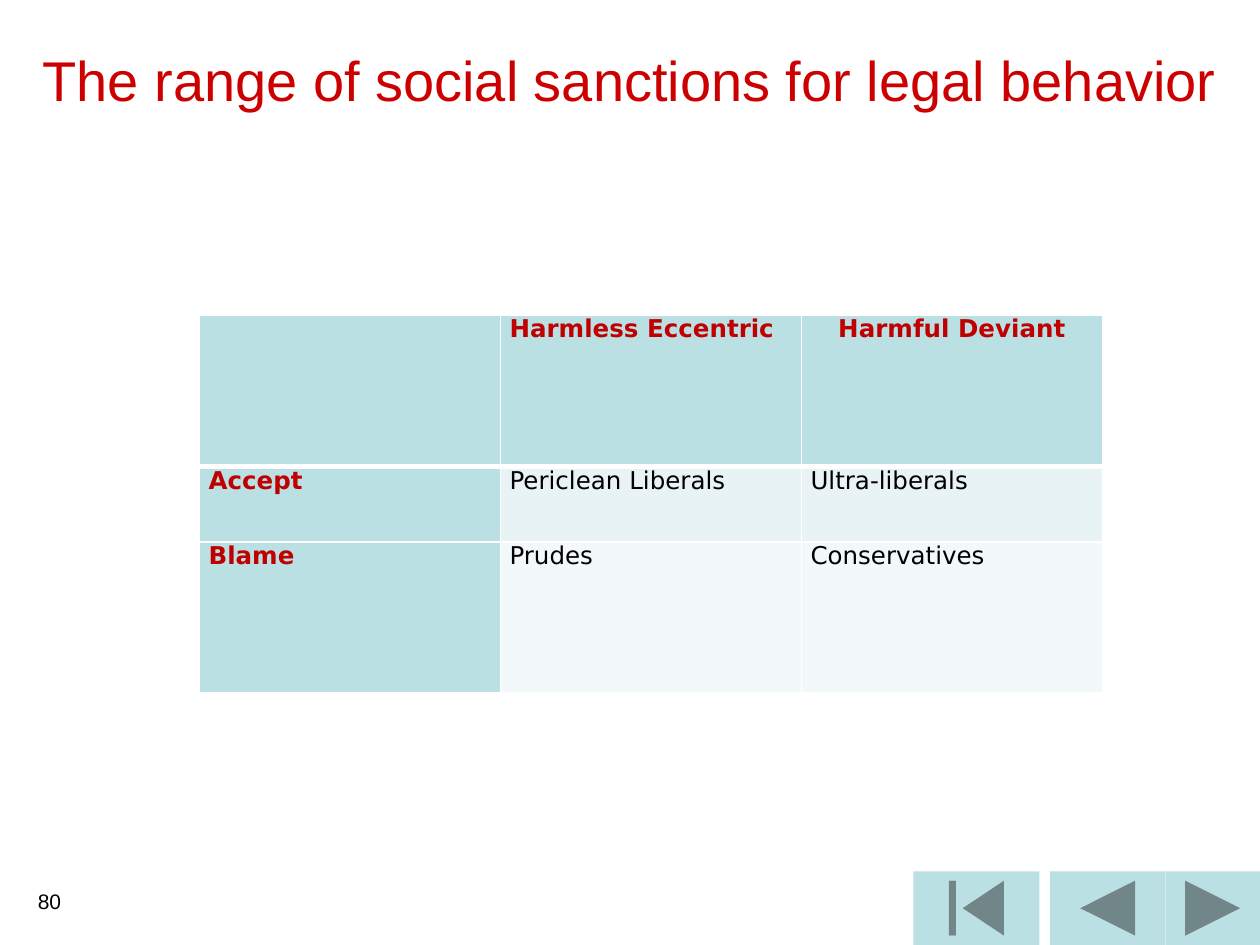
"""Build a slide with a table of social sanctions and navigation buttons."""
from dataclasses import dataclass

import pptx
import pptx.dml.color
import pptx.enum.shapes
import pptx.enum.text
import pptx.oxml.ns
import pptx.slide
import pptx.table
import pptx.text.text
import pptx.util
from lxml import etree

Pt = pptx.util.Pt
RGB = pptx.dml.color.RGBColor
Align = pptx.enum.text.PP_ALIGN
Anchor = pptx.enum.text.MSO_ANCHOR
Kind = pptx.enum.shapes.MSO_SHAPE

WHITE = RGB(0xFF, 0xFF, 0xFF)
BLACK = RGB(0, 0, 0)
RED = RGB(0xCC, 0, 0)
DARK = RGB(0xC0, 0, 0)
TEAL = RGB(0xBB, 0xE0, 0xE3)
LIGHT = RGB(0xE7, 0xF3, 0xF4)
PALE = RGB(0xF3, 0xF9, 0xFA)


@dataclass
class Button:
    kind: Kind
    left: float
    width: float


@dataclass
class Row:
    height: float
    fill: RGB
    texts: tuple[str, str, str]


BUTTONS = [
    Button(Kind.ACTION_BUTTON_BACK_OR_PREVIOUS, 600, 66),
    Button(Kind.ACTION_BUTTON_BEGINNING, 522, 72),
    Button(Kind.ACTION_BUTTON_FORWARD_OR_NEXT, 666, 54),
]
ROWS = [
    Row(86.4, TEAL, ("", "Harmless Eccentric", "Harmful Deviant")),
    Row(43.2, LIGHT, ("Accept", "Periclean Liberals", "Ultra-liberals")),
    Row(86.4, PALE, ("Blame", "Prudes", "Conservatives")),
]


def write(para: pptx.text.text._Paragraph, text: str, size: float, font: str,
          color: RGB, bold: bool = False, align: Align = Align.LEFT) -> None:
    para.alignment = align
    run = para.add_run()
    run.text = text
    run.font.size = Pt(size)
    run.font.name = font
    run.font.bold = bold
    run.font.color.rgb = color


def draw_button(slide: pptx.slide.Slide, item: Button) -> None:
    shape = slide.shapes.add_shape(
        item.kind, Pt(item.left), Pt(498), Pt(item.width), Pt(42))
    shape.shadow.inherit = False
    shape.fill.solid()
    shape.fill.fore_color.rgb = TEAL
    shape.line.fill.background()


def add_edge(cell: pptx.table._Cell, side: str, width: float) -> None:
    qn = pptx.oxml.ns.qn
    props = cell._tc.get_or_add_tcPr()
    line = etree.SubElement(props, qn(f"a:ln{side}"), w=str(Pt(width)))
    fill = etree.SubElement(line, qn("a:solidFill"))
    etree.SubElement(fill, qn("a:srgbClr"), val=str(WHITE))


def draw_cell(cell: pptx.table._Cell, row: int, col: int) -> None:
    widths = {"L": 1, "R": 1, "T": 3 if row == 1 else 1, "B": 3 if row == 0 else 1}
    for side, width in widths.items():
        add_edge(cell, side, width)
    head = row == 0 or col == 0
    cell.fill.solid()
    cell.fill.fore_color.rgb = TEAL if head else ROWS[row].fill
    cell.margin_left = cell.margin_right = Pt(5.2)
    cell.margin_top = cell.margin_bottom = 0
    text = ROWS[row].texts[col]
    if text:
        align = Align.CENTER if (row, col) == (0, 2) else Align.LEFT
        write(cell.text_frame.paragraphs[0], text, 14, "DejaVu Sans",
              DARK if head else BLACK, head, align)


def draw_table(slide: pptx.slide.Slide) -> None:
    table = slide.shapes.add_table(
        len(ROWS), 3, Pt(114), Pt(180), Pt(516), Pt(216)).table
    table.horz_banding = False
    for col in table.columns:
        col.width = Pt(172)
    for r, row in enumerate(ROWS):
        table.rows[r].height = Pt(row.height)
        for c in range(len(row.texts)):
            draw_cell(table.cell(r, c), r, c)


def draw_title(slide: pptx.slide.Slide) -> None:
    title = slide.shapes.title
    title.left, title.top, title.width, title.height = 0, 0, Pt(720), Pt(90)
    title.text_frame.vertical_anchor = Anchor.MIDDLE
    write(title.text_frame.paragraphs[0],
          "The range of social sanctions for legal behavior",
          32, "Arial", RED, align=Align.CENTER)


def draw_number(slide: pptx.slide.Slide) -> None:
    box = slide.shapes.add_textbox(0, Pt(504), Pt(42), Pt(36))
    box.text_frame.word_wrap = True
    write(box.text_frame.paragraphs[0], "80", 12, "Arial", BLACK,
          align=Align.RIGHT)


def main() -> None:
    deck = pptx.Presentation()
    deck.slide_width, deck.slide_height = Pt(720), Pt(540)
    slide = deck.slides.add_slide(deck.slide_layouts[5])
    for item in BUTTONS:
        draw_button(slide, item)
    draw_title(slide)
    draw_table(slide)
    draw_number(slide)
    deck.save("out.pptx")


if __name__ == "__main__":
    main()
